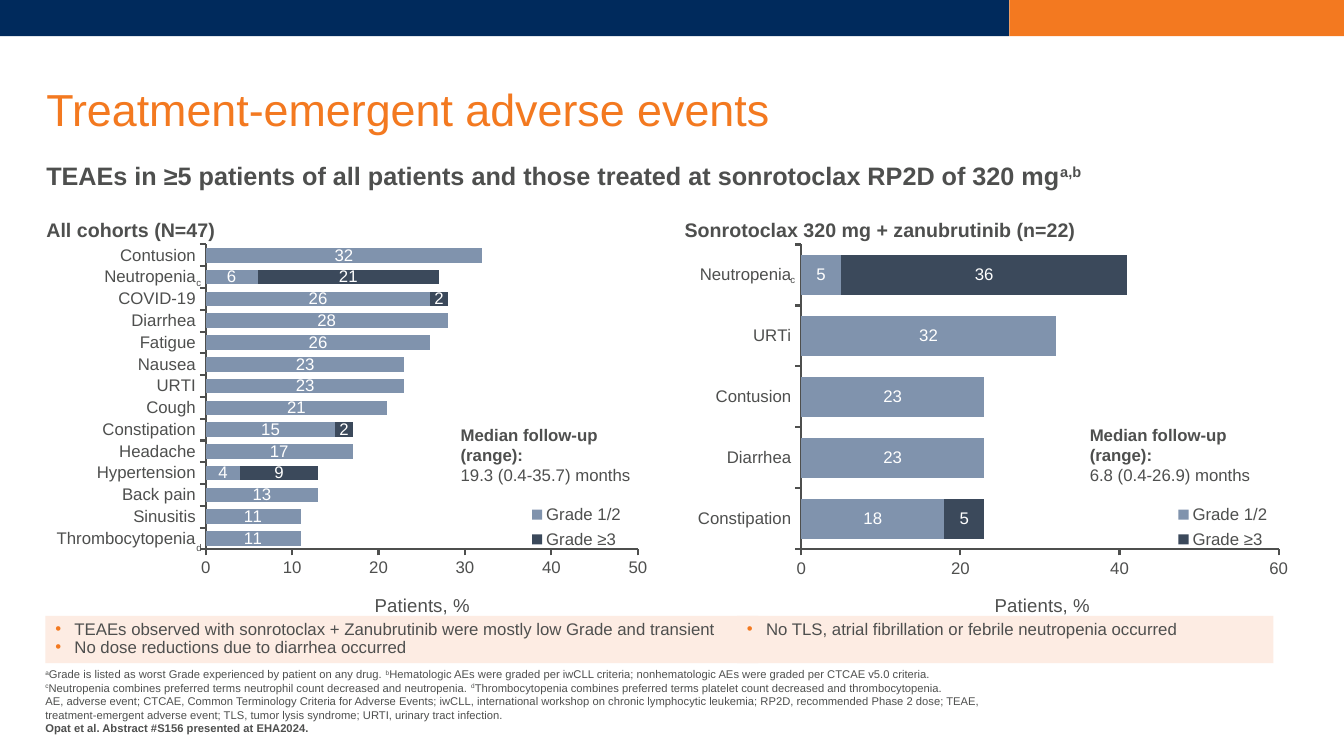
from lxml import etree
from pptx import Presentation, util as u
from pptx.chart.data import CategoryChartData
from pptx.dml.color import RGBColor
from pptx.enum import chart as ch, shapes, text
from pptx.oxml.ns import qn

Inches, Pt = u.Inches, u.Pt
COLORS = {
    "navy": "002A5C", "orange": "F37920", "text": "4E4F4E", "white": "FFFFFF",
    "low": "8093AD", "high": "3B495B", "panel": "FDECE3",
}
C = {name: RGBColor.from_string(value) for name, value in COLORS.items()}
TOP, MIDDLE, BOTTOM = text.MSO_ANCHOR.TOP, text.MSO_ANCHOR.MIDDLE, text.MSO_ANCHOR.BOTTOM

prs = Presentation()
prs.slide_width, prs.slide_height = Inches(13.33), Inches(7.5)
s = prs.slides.add_slide(prs.slide_layouts[6])


def add_text(box, paras, size, color="text", anchor=TOP, inset=0, spacing=None, fill=None):
    """Write (wording, bold) paragraphs; ^marks^ become superscripts."""
    x, y, w, h = map(Inches, box)
    if fill:
        sp = s.shapes.add_shape(shapes.MSO_SHAPE.RECTANGLE, x, y, w, h)
        sp.shadow.inherit = False
        sp.fill.solid()
        sp.fill.fore_color.rgb = C[fill]
        sp.line.fill.background()
    else:
        sp = s.shapes.add_textbox(x, y, w, h)
    tf = sp.text_frame
    tf.word_wrap = True
    tf.vertical_anchor = anchor
    tf.margin_left = tf.margin_right = Inches(inset)
    tf.margin_top = tf.margin_bottom = Inches(inset / 2)
    for i, (wording, bold) in enumerate(paras):
        p = tf.paragraphs[0] if i == 0 else tf.add_paragraph()
        p.alignment = text.PP_ALIGN.LEFT
        if spacing:
            p.line_spacing = spacing
        for j, part in enumerate(wording.split("^")):
            if part:
                r = p.add_run()
                r.text = part
                r.font.name, r.font.size, r.font.bold = "Arial", Pt(size), bold
                r.font.color.rgb = C[color]
                if j % 2:
                    r._r.get_or_add_rPr().set("baseline", "30000")
    return tf


def place(parent, index, **layout):
    """Give a chart part a fixed position inside its chart."""
    for old in parent.findall(qn("c:layout")):
        parent.remove(old)
    holder = etree.Element(qn("c:layout"))
    manual = etree.SubElement(holder, qn("c:manualLayout"))
    for tag, value in layout.items():
        etree.SubElement(manual, qn(f"c:{tag}")).set("val", str(value))
    parent.insert(index, holder)


for x, w, color in ((0, 10.01, "navy"), (10.01, 3.32, "orange")):
    add_text((x, 0, w, 0.36), [], 12, fill=color)

add_text((0.46, 0.63, 12.43, 0.72), [("Treatment-emergent adverse events", False)],
         32, "orange", BOTTOM, spacing=0.9)
add_text((0.46, 1.4, 12.43, 0.71),
         [("TEAEs in ≥5 patients of all patients and those treated at sonrotoclax "
           "RP2D of 320 mg^a,b^", True)], 18, anchor=MIDDLE, spacing=0.9)

all_events = [
    ("Thrombocytopenia", 11, None), ("Sinusitis", 11, None), ("Back pain", 13, None),
    ("Hypertension", 4, 9), ("Headache", 17, None), ("Constipation", 15, 2),
    ("Cough", 21, None), ("URTI", 23, None), ("Nausea", 23, None), ("Fatigue", 26, None),
    ("Diarrhea", 28, None), ("COVID-19", 26, 2), ("Neutropenia", 6, 21),
    ("Contusion", 32, None),
]
rp2d_events = [
    ("Constipation", 18, 5), ("Diarrhea", 23, None), ("Contusion", 23, None),
    ("URTi", 32, None), ("Neutropenia", 5, 36),
]
cohorts = [
    (0.46, 0.46, "All cohorts (N=47)", all_events, 50, 10, 0.26, 0.705, 0.53, 0.775,
     4.47, "19.3 (0.4-35.7) months"),
    (6.81, 6.79, "Sonrotoclax 320 mg + zanubrutinib (n=22)", rp2d_events, 60, 20,
     0.187, 0.779, 0.497, 0.785, 10.71, "6.8 (0.4-26.9) months"),
]
for (chart_x, head_x, heading, events, top, step, plot_x, plot_w, title_x, legend_x,
     note_x, follow_up) in cohorts:
    names, low, high = zip(*events)
    data = CategoryChartData()
    data.categories = names
    data.add_series("Grade 1/2", low)
    data.add_series("Grade ≥3", high)
    chart = s.shapes.add_chart(ch.XL_CHART_TYPE.BAR_STACKED, Inches(chart_x), Inches(2.34),
                               Inches(6.08), Inches(4.28), data).chart
    chart.has_title = False
    chart.font.name, chart.font.size = "Arial", Pt(12)
    chart.font.color.rgb = C["text"]
    plot = chart.plots[0]
    plot.gap_width, plot.overlap, plot.vary_by_categories = 50, 100, False
    for series, color in zip(plot.series, ("low", "high")):
        series.format.fill.solid()
        series.format.fill.fore_color.rgb = C[color]
        labels = series.data_labels
        labels.show_value = True
        labels.position = ch.XL_LABEL_POSITION.CENTER
        labels.font.name, labels.font.size = "Arial", Pt(12)
        labels.font.color.rgb = C["white"]
    for axis in (chart.category_axis, chart.value_axis):
        axis.has_major_gridlines = False
        axis.major_tick_mark = ch.XL_TICK_MARK.OUTSIDE
        axis.format.line.width = Pt(1.5)
        axis.format.line.color.rgb = C["text"]
    axis.minimum_scale, axis.maximum_scale, axis.major_unit = 0, top, step
    tf = axis.axis_title.text_frame
    tf.text = "Patients, %"
    font = tf.paragraphs[0].runs[0].font
    font.name, font.size, font.bold = "Arial", Pt(13.3), False
    font.color.rgb = C["text"]
    chart.has_legend = True
    legend = chart.legend
    legend.position = ch.XL_LEGEND_POSITION.BOTTOM
    legend.include_in_layout = False
    legend.font.name, legend.font.size = "Arial", Pt(12)
    legend.font.color.rgb = C["text"]
    area = chart._chartSpace.chart.plotArea
    place(area, 0, layoutTarget="inner", xMode="edge", yMode="edge",
          x=plot_x, y=0.02, w=plot_w, h=0.707)
    place(axis.axis_title._element, 1, xMode="edge", yMode="edge", x=title_x, y=0.82)
    place(legend._element, 1, xMode="edge", yMode="edge", x=legend_x, y=0.61, w=0.18, h=0.13)

    add_text((head_x, 2.09, 6.09, 0.41), [(heading, True)], 14, anchor=MIDDLE, spacing=0.9)
    add_text((note_x, 4.16, 1.92, 0.71),
             [("Median follow-up (range):", True), (follow_up, False)], 12, inset=0.1)

for x, y, mark in ((1.85, 2.68, "c"), (7.74, 2.65, "c"), (1.85, 5.31, "d")):
    add_text((x, y, 0.49, 0.24), [(f"^{mark}^", False)], 12, inset=0.1)

findings = [
    (0.45, 7.07, ["TEAEs observed with sonrotoclax + Zanubrutinib were mostly low Grade and transient",
                  "No dose reductions due to diarrhea occurred"]),
    (7.31, 5.32, ["No TLS, atrial fibrillation or febrile neutropenia occurred"]),
]
for x, w, points in findings:
    tf = add_text((x, 6.11, w, 0.47), [(point, False) for point in points], 12,
                  inset=0.1, spacing=Pt(13), fill="panel")
    for p in tf.paragraphs:
        pPr = p._p.get_or_add_pPr()
        pPr.set("marL", str(Inches(0.19)))
        pPr.set("indent", str(-Inches(0.19)))
        color = etree.SubElement(pPr, qn("a:buClr"))
        etree.SubElement(color, qn("a:srgbClr")).set("val", COLORS["orange"])
        etree.SubElement(pPr, qn("a:buFont")).set("typeface", "Arial")
        etree.SubElement(pPr, qn("a:buChar")).set("char", "•")

add_text((0.45, 6.58, 9.33, 0.71), [
    ("^a^Grade is listed as worst Grade experienced by patient on any drug. "
     "^b^Hematologic AEs were graded per iwCLL criteria; nonhematologic AEs were graded per "
     "CTCAE v5.0 criteria. ^c^Neutropenia combines preferred terms neutrophil count decreased "
     "and neutropenia. ^d^Thrombocytopenia combines preferred terms platelet count decreased "
     "and thrombocytopenia.", False),
    ("AE, adverse event; CTCAE, Common Terminology Criteria for Adverse Events; iwCLL, "
     "international workshop on chronic lymphocytic leukemia; RP2D, recommended Phase 2 dose; "
     "TEAE, treatment-emergent adverse event; TLS, tumor lysis syndrome; URTI, urinary tract "
     "infection.", False),
    ("Opat et al. Abstract #S156 presented at EHA2024.", True),
], 8, anchor=BOTTOM)

prs.save("out.pptx")
